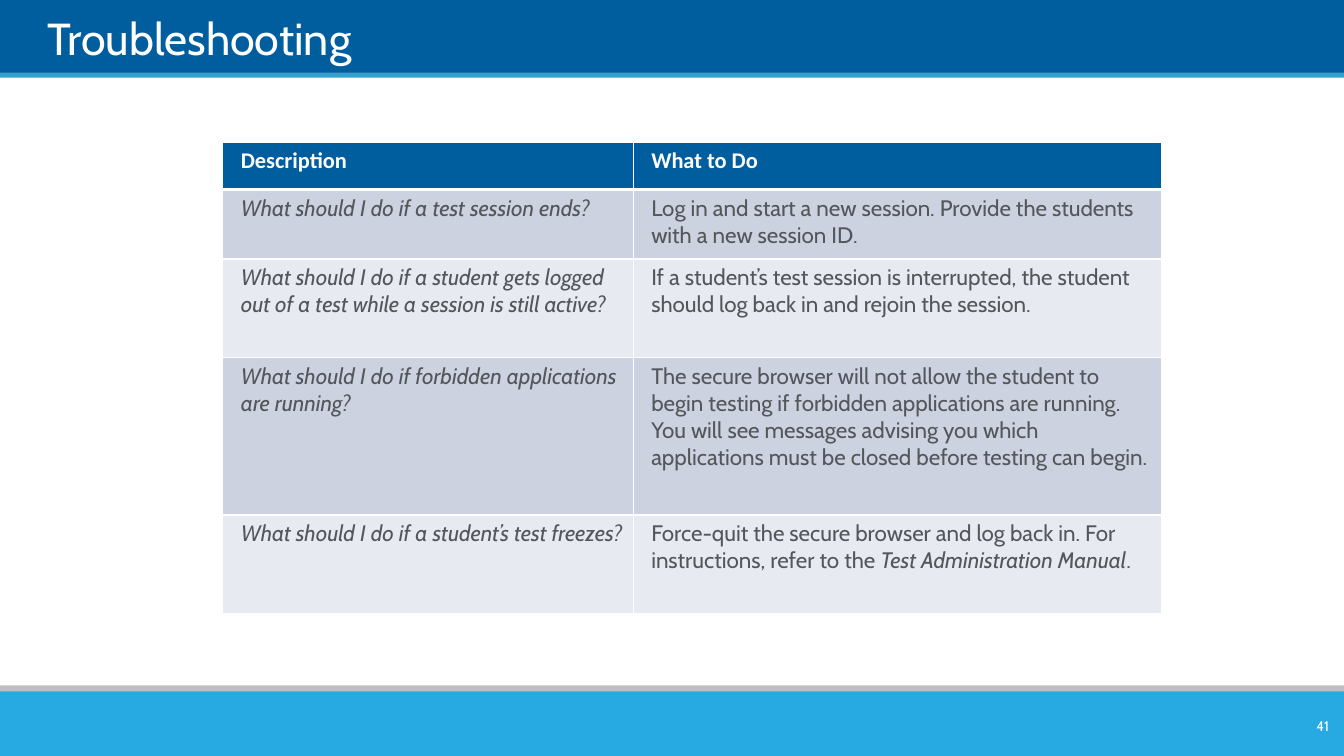
from dataclasses import dataclass

from lxml import etree
from pptx import Presentation
from pptx.dml.color import RGBColor
from pptx.enum.shapes import MSO_SHAPE
from pptx.enum.text import MSO_ANCHOR, MSO_AUTO_SIZE, PP_ALIGN
from pptx.oxml.ns import qn
from pptx.slide import Slide
from pptx.table import _Cell
from pptx.text.text import TextFrame, _Paragraph
from pptx.util import Inches, Pt

RECTANGLE = MSO_SHAPE.RECTANGLE
BOTTOM, MIDDLE = MSO_ANCHOR.BOTTOM, MSO_ANCHOR.MIDDLE
LEFT, RIGHT = PP_ALIGN.LEFT, PP_ALIGN.RIGHT
NO_AUTOFIT = MSO_AUTO_SIZE.NONE
TITLE_ONLY = 5
BODY_FONT, HEADER_FONT = "Cabin", "Calibri"
COLORS = {
    "navy": "005E9E",
    "accent": "35A0CE",
    "gray": "BFBFBF",
    "sky": "27AAE1",
    "white": "FFFFFF",
    "text": "53565A",
    "dark_row": "CCD2DF",
    "light_row": "E7EAF0",
}
SLIDE_WIDTH = 13.33


@dataclass
class Bar:
    top: float
    height: float
    color: str


@dataclass
class Phrase:
    text: str
    italic: bool = False


@dataclass
class Problem:
    description: str
    solution: list[Phrase]
    height: float


BARS = [
    Bar(-0.01, 0.75, "navy"),
    Bar(0.72, 0.05, "accent"),
    Bar(6.8, 0.14, "gray"),
    Bar(6.86, 0.64, "sky"),
]
HEADINGS = ["Description", "What to Do"]
HEADER_HEIGHT = 0.47
COLUMN_WIDTHS = [4.07, 5.24]
PROBLEMS = [
    Problem(
        "What should I do if a test session ends?",
        [Phrase("Log in and start a new session. Provide the students with a new session ID.")],
        0.69,
    ),
    Problem(
        "What should I do if a student gets logged out of a test while a session is still active?",
        [Phrase("If a student’s test session is interrupted, the student should log back in "
                "and rejoin the session.")],
        0.98,
    ),
    Problem(
        "What should I do if forbidden applications are running?",
        [Phrase("The secure browser will not allow the student to begin testing if forbidden "
                "applications are running. You will see messages advising you which "
                "applications must be closed before testing can begin.")],
        1.56,
    ),
    Problem(
        "What should I do if a student’s test freezes?",
        [
            Phrase("Force-quit the secure browser and log back in. For instructions, refer to the "),
            Phrase("Test Administration Manual", italic=True),
            Phrase("."),
        ],
        0.98,
    ),
]


def rgb(color: str) -> RGBColor:
    return RGBColor.from_string(COLORS[color])


def add_text(paragraph: _Paragraph, text: str, *, size: float = 16, font: str = BODY_FONT,
             color: str = "text", bold: bool = False, italic: bool = False) -> None:
    run = paragraph.add_run()
    run.text = text
    run.font.size = Pt(size)
    run.font.name = font
    run.font.color.rgb = rgb(color)
    run.font.bold = bold
    run.font.italic = italic


def set_margins(frame: TextFrame, margin: float) -> None:
    frame.margin_left = frame.margin_right = Inches(margin)
    frame.margin_top = frame.margin_bottom = Inches(margin)


def add_title(slide: Slide) -> None:
    title = slide.shapes.title
    title.left, title.top = Inches(0.47), Inches(0.07)
    title.width, title.height = Inches(12.05), Inches(0.57)
    frame = title.text_frame
    frame.auto_size = NO_AUTOFIT
    frame.vertical_anchor = BOTTOM
    set_margins(frame, 0)
    heading = frame.paragraphs[0]
    heading.alignment = LEFT
    add_text(heading, "Troubleshooting", size=32, color="white")


def add_bar(slide: Slide, bar: Bar) -> None:
    band = slide.shapes.add_shape(
        RECTANGLE, 0, Inches(bar.top), Inches(SLIDE_WIDTH), Inches(bar.height))
    band.shadow.inherit = False
    band.fill.solid()
    band.fill.fore_color.rgb = rgb(bar.color)
    band.line.fill.background()
    slide.shapes.title.element.addprevious(band.element)


def add_page_number(slide: Slide) -> None:
    page_number = slide.shapes.add_textbox(
        Inches(12.51), Inches(7.05), Inches(0.77), Inches(0.3))
    frame = page_number.text_frame
    frame.word_wrap = True
    frame.vertical_anchor = MIDDLE
    frame.paragraphs[0].alignment = RIGHT
    add_text(frame.paragraphs[0], "41", size=10, color="white")


def format_cell(cell: _Cell, fill: str, bottom_width: float = 1) -> _Paragraph:
    properties = cell._tc.get_or_add_tcPr()
    for side, width in {"L": 1, "R": 1, "T": 1, "B": bottom_width}.items():
        border = etree.SubElement(properties, qn(f"a:ln{side}"), w=str(Pt(width)))
        solid = etree.SubElement(border, qn("a:solidFill"))
        etree.SubElement(solid, qn("a:srgbClr"), val=COLORS["white"])
    cell.fill.solid()
    cell.fill.fore_color.rgb = rgb(fill)
    paragraph = cell.text_frame.paragraphs[0]
    paragraph.space_after = Pt(4)
    indent = paragraph._p.get_or_add_pPr()
    indent.set("marL", str(Inches(0.08)))
    indent.set("indent", "0")
    return paragraph


def add_problem_table(slide: Slide) -> None:
    heights = [HEADER_HEIGHT] + [problem.height for problem in PROBLEMS]
    table = slide.shapes.add_table(
        len(heights), len(HEADINGS), Inches(2.21), Inches(1.41),
        Inches(sum(COLUMN_WIDTHS)), Inches(sum(heights))).table
    for column, width in zip(table.columns, COLUMN_WIDTHS):
        column.width = Inches(width)
    for row, height in zip(table.rows, heights):
        row.height = Inches(height)

    for column, heading in enumerate(HEADINGS):
        paragraph = format_cell(table.cell(0, column), "navy", bottom_width=3)
        add_text(paragraph, heading, font=HEADER_FONT, color="white", bold=True)

    for row, problem in enumerate(PROBLEMS, start=1):
        fill = "dark_row" if row % 2 else "light_row"
        answers = [[Phrase(problem.description, italic=True)], problem.solution]
        for column, phrases in enumerate(answers):
            top_cell = table.cell(row, column)
            paragraph = format_cell(top_cell, fill)
            for phrase in phrases:
                add_text(paragraph, phrase.text, italic=phrase.italic)


def main() -> None:
    presentation = Presentation()
    presentation.slide_width = Inches(SLIDE_WIDTH)
    presentation.slide_height = Inches(7.5)
    slide = presentation.slides.add_slide(presentation.slide_layouts[TITLE_ONLY])
    add_title(slide)
    for bar in BARS:
        add_bar(slide, bar)
    add_page_number(slide)
    add_problem_table(slide)
    presentation.save("out.pptx")


if __name__ == "__main__":
    main()
